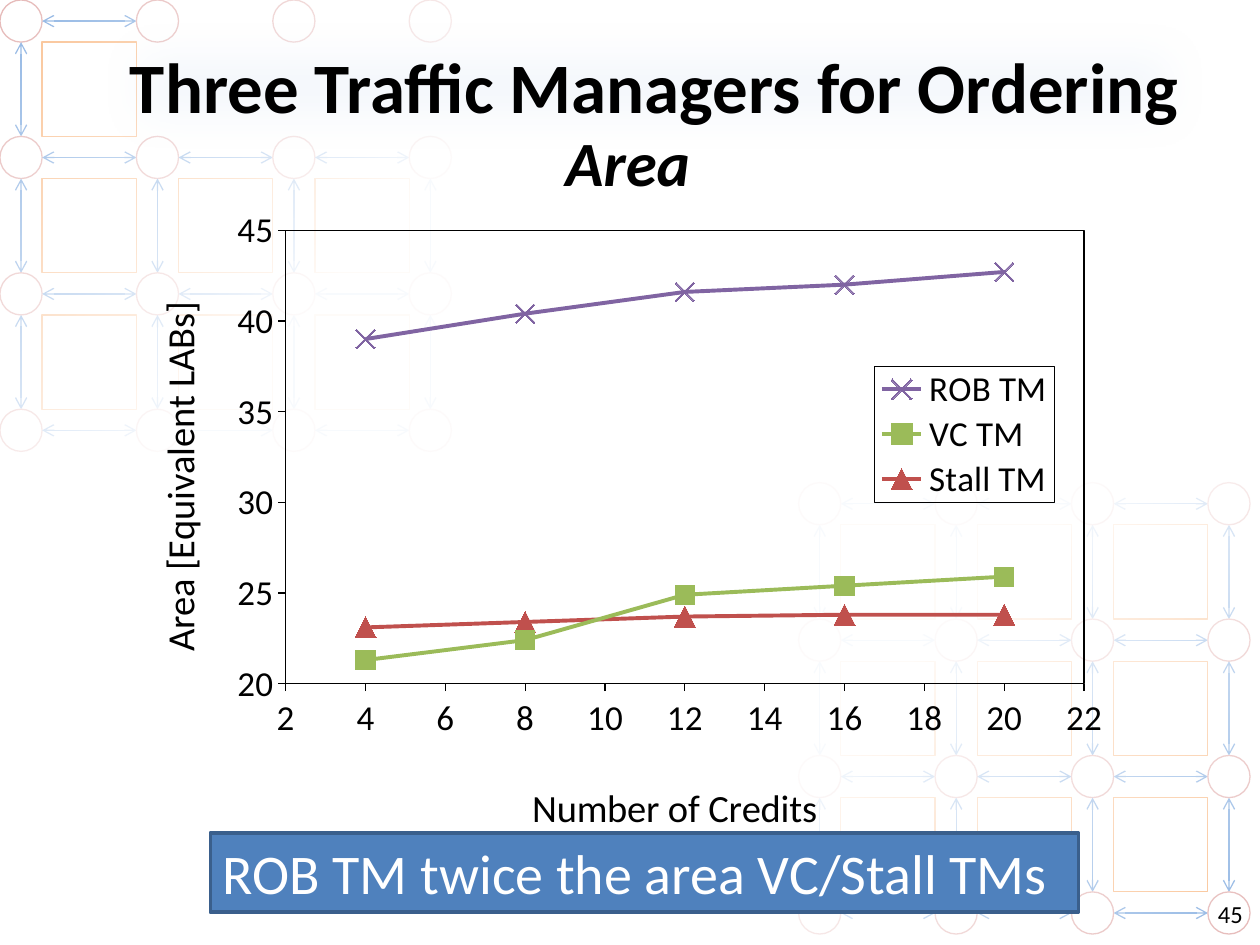
import itertools

import pptx
import pptx.chart.data
import pptx.dml.color
import pptx.enum.chart
import pptx.enum.shapes
import pptx.enum.text
import pptx.oxml
import pptx.oxml.ns
import pptx.util
from pptx.util import Cm

COLORS = {
    "black": "000000", "white": "FFFFFF", "node": "E6B9B8", "link": "8EB4E3",
    "cell": "FAC090", "haze": "C6D9F1", "outline": "DCE6F2",
    "banner": "4F81BD", "banner_edge": "3A5F8C",
    "rob": "8064A2", "vc": "9BBB59", "stall": "C0504D",
}
CREDITS = (4, 8, 12, 16, 20)
MARKERS = pptx.enum.chart.XL_MARKER_STYLE
TRAFFIC_MANAGERS = (
    ("ROB TM", "rob", MARKERS.X, 11, (39, 40.4, 41.6, 42, 42.7)),
    ("VC TM", "vc", MARKERS.SQUARE, 11, (21.3, 22.4, 24.9, 25.4, 25.9)),
    ("Stall TM", "stall", MARKERS.TRIANGLE, 12, (23.1, 23.4, 23.7, 23.8, 23.8)),
)
NODE, CELL = 0.85, 1.9
PITCH = NODE + CELL
GRID_SIZE = 4
SHAPES = pptx.enum.shapes.MSO_SHAPE
CENTER = pptx.enum.text.PP_ALIGN.CENTER
MIDDLE = pptx.enum.text.MSO_ANCHOR.MIDDLE


def rgb(name):
    return pptx.dml.color.RGBColor.from_string(COLORS[name])


def xml(tag, content="", attributes=""):
    namespaces = pptx.oxml.ns.nsdecls("a", "c")
    return pptx.oxml.parse_xml(f"<{tag} {namespaces} {attributes}>{content}</{tag}>")


def solid(name):
    return f'<a:solidFill><a:srgbClr val="{COLORS[name]}"/></a:solidFill>'


def border():
    return xml("c:spPr", "<a:noFill/><a:ln w=\"9525\">" + solid("black") + "</a:ln>")


def set_layout(parent, index, inner=False, **fractions):
    """Place a chart part by fractions of the chart's size."""
    for old in parent.findall(pptx.oxml.ns.qn("c:layout")):
        parent.remove(old)
    parts = '<c:layoutTarget val="inner"/>' if inner else ""
    parts += '<c:xMode val="edge"/><c:yMode val="edge"/>'
    parts += "".join(f'<c:{key} val="{value}"/>' for key, value in fractions.items())
    parent.insert(index, xml("c:layout", f"<c:manualLayout>{parts}</c:manualLayout>"))


class SlideBuilder:
    def __init__(self, slide, font="Calibri"):
        self.slide = slide
        self.font = font

    def style_font(self, font, size, color="black", bold=False, italic=False):
        font.name, font.size = self.font, pptx.util.Pt(size)
        font.bold, font.italic = bold, italic
        font.color.rgb = rgb(color)

    def set_text(self, shape, text, size, align=None, **style):
        frame = shape.text_frame
        frame.text = text
        frame.word_wrap = True
        frame.vertical_anchor = MIDDLE
        paragraph = frame.paragraphs[0]
        paragraph.alignment = align
        self.style_font(paragraph.runs[0].font, size, **style)

    def shape(self, kind, box, fill=None, line=None, width=0.75):
        shape = self.slide.shapes.add_shape(kind, *map(Cm, box))
        shape.shadow.inherit = False
        if fill:
            shape.fill.solid()
            shape.fill.fore_color.rgb = rgb(fill)
        else:
            shape.fill.background()
        if line:
            shape.line.color.rgb = rgb(line)
            shape.line.width = pptx.util.Pt(width)
        else:
            shape.line.fill.background()
        return shape

    def double_arrow(self, *ends):
        arrow = self.slide.shapes.add_connector(
            pptx.enum.shapes.MSO_CONNECTOR.STRAIGHT, *map(Cm, ends))
        arrow.line.color.rgb = rgb("link")
        arrow.line.width = pptx.util.Pt(0.75)
        properties = arrow._element.spPr
        line = properties.find(pptx.oxml.ns.qn("a:ln"))
        for end in ("a:headEnd", "a:tailEnd"):
            line.append(xml(end, attributes='type="arrow"'))
        properties.append(xml("a:effectLst"))

    def mesh(self, left, top, sparse_top=False):
        """Draw a mesh of routers; a sparse top row links only its first router."""
        for row, col in itertools.product(range(GRID_SIZE), repeat=2):
            x, y = left + col * PITCH, top + row * PITCH
            self.shape(SHAPES.OVAL, (x, y, NODE, NODE), "white", "node")
            if sparse_top and row == 0 and col > 0:
                continue
            has_right, has_below = col < GRID_SIZE - 1, row < GRID_SIZE - 1
            if has_right:
                self.double_arrow(x + NODE, y + NODE / 2, x + PITCH, y + NODE / 2)
            if has_below:
                self.double_arrow(x + NODE / 2, y + PITCH, x + NODE / 2, y + NODE)
            if has_right and has_below:
                self.shape(SHAPES.RECTANGLE, (x + NODE, y + NODE, CELL, CELL), line="cell")

    def fade(self, box, rotation=0):
        """Cover a mesh with white that grows denser along the diagonal."""
        cover = self.shape(SHAPES.RECTANGLE, box)
        cover.rotation = rotation
        stops = "".join(
            f'<a:gs pos="{place}000"><a:srgbClr val="{COLORS["white"]}">'
            f'<a:alpha val="{alpha}000"/></a:srgbClr></a:gs>'
            for place, alpha in ((0, 0), (66, 93)))
        properties = cover._element.spPr
        plain = properties.find(pptx.oxml.ns.qn("a:noFill"))
        properties.replace(plain, xml(
            "a:gradFill", f'<a:gsLst>{stops}</a:gsLst><a:lin ang="2700000" scaled="0"/>'))

    def title(self, text, box):
        title = self.slide.shapes.title
        self.slide.shapes._spTree.append(title._element)
        title.left, title.top, title.width, title.height = map(Cm, box)
        title.fill.solid()
        title.fill.fore_color.rgb = rgb("haze")
        title.shadow.inherit = False
        properties = title._element.spPr
        color = next(properties.iter(pptx.oxml.ns.qn("a:srgbClr")))
        color.append(xml("a:alpha", attributes='val="20000"'))
        effects = properties.find(pptx.oxml.ns.qn("a:effectLst"))
        effects.append(xml("a:softEdge", attributes='rad="317500"'))
        self.set_text(title, text, 40.5, CENTER, bold=True)
        run = title.text_frame.paragraphs[0].runs[0]
        run._r.get_or_add_rPr().insert(0, xml("a:ln", solid("outline"), 'w="12700"'))

    def text(self, text, box, size, inset=0.25, **style):
        label = self.slide.shapes.add_textbox(*map(Cm, box))
        label.text_frame.margin_left = label.text_frame.margin_right = Cm(inset)
        self.set_text(label, text, size, CENTER, **style)

    def banner(self, text, box):
        banner = self.shape(SHAPES.RECTANGLE, box, "banner", "banner_edge", 2)
        self.set_text(banner, text, 32, pptx.enum.text.PP_ALIGN.LEFT, color="white")

    def axis(self, axis, title, low, high, step, x, y):
        axis.minimum_scale, axis.maximum_scale, axis.major_unit = low, high, step
        axis.has_major_gridlines = False
        axis.major_tick_mark = pptx.enum.chart.XL_TICK_MARK.OUTSIDE
        axis.minor_tick_mark = pptx.enum.chart.XL_TICK_MARK.NONE
        axis.format.line.color.rgb = rgb("black")
        axis.format.line.width = pptx.util.Pt(0.75)
        axis.tick_labels.number_format = "General"
        axis.tick_labels.number_format_is_linked = False
        self.style_font(axis.tick_labels.font, 20)
        frame = axis.axis_title.text_frame
        frame.text = title
        self.style_font(frame.paragraphs[0].runs[0].font, 22)
        set_layout(axis.axis_title._element, 1, x=x, y=y)

    def area_chart(self, box):
        data = pptx.chart.data.XyChartData()
        for name, _, _, _, areas in TRAFFIC_MANAGERS:
            series = data.add_series(name)
            for credits, area in zip(CREDITS, areas):
                series.add_data_point(credits, area)
        chart = self.slide.shapes.add_chart(
            pptx.enum.chart.XL_CHART_TYPE.XY_SCATTER_LINES, *map(Cm, box), data).chart
        self.style_font(chart.font, 10)
        chart.has_title = False
        plot = chart.plots[0]
        plot.vary_by_categories = False
        for series, (_, color, marker, size, _) in zip(plot.series, TRAFFIC_MANAGERS):
            series.smooth = False
            series.format.line.color.rgb = rgb(color)
            series.format.line.width = pptx.util.Pt(2.25)
            series.marker.style, series.marker.size = marker, size
            series.marker.format.fill.solid()
            series.marker.format.fill.fore_color.rgb = rgb(color)
            if marker == MARKERS.X:
                series.marker.format.line.color.rgb = rgb(color)
            else:
                series.marker.format.line.fill.background()
        self.axis(chart.category_axis, "Number of Credits", 2, 22, 2, 0.4, 0.89)
        self.axis(chart.value_axis, "Area [Equivalent LABs]", 20, 45, 5, 0.02, 0.15)
        plot_area = chart._chartSpace.chart.plotArea
        set_layout(plot_area, 0, inner=True, x=0.16, y=0.05, w=0.8, h=0.7)
        plot_area.append(border())
        chart.has_legend = True
        legend = chart.legend
        legend.position = pptx.enum.chart.XL_LEGEND_POSITION.RIGHT
        legend.include_in_layout = True
        self.style_font(legend.font, 20)
        set_layout(legend._element, 1, x=0.75, y=0.26, w=0.18, h=0.21)
        legend._element.find(pptx.oxml.ns.qn("c:overlay")).addnext(border())


def main():
    presentation = pptx.Presentation()
    presentation.slide_width, presentation.slide_height = Cm(25.4), Cm(19.05)
    builder = SlideBuilder(presentation.slides.add_slide(presentation.slide_layouts[5]))
    builder.mesh(0, 0, sparse_top=True)
    builder.fade((0, 0, 9.3, 9.32))
    builder.mesh(16.1, 9.73)
    builder.fade((15.88, 9.32, 9.52, 9.73), rotation=180)
    builder.title("Three Traffic Managers for Ordering", (2.03, 0.33, 22.33, 2.79))
    builder.text("45", (24.26, 17.91, 1.09, 1.02), 14, inset=0)
    builder.area_chart((2.54, 3.99, 20.12, 13.06))
    builder.banner("ROB TM twice the area VC/Stall TMs", (4.24, 16.79, 17.5, 1.6))
    builder.text("Area", (7.98, 2.36, 9.35, 1.8), 36, bold=True, italic=True)
    presentation.save("out.pptx")


if __name__ == "__main__":
    main()
